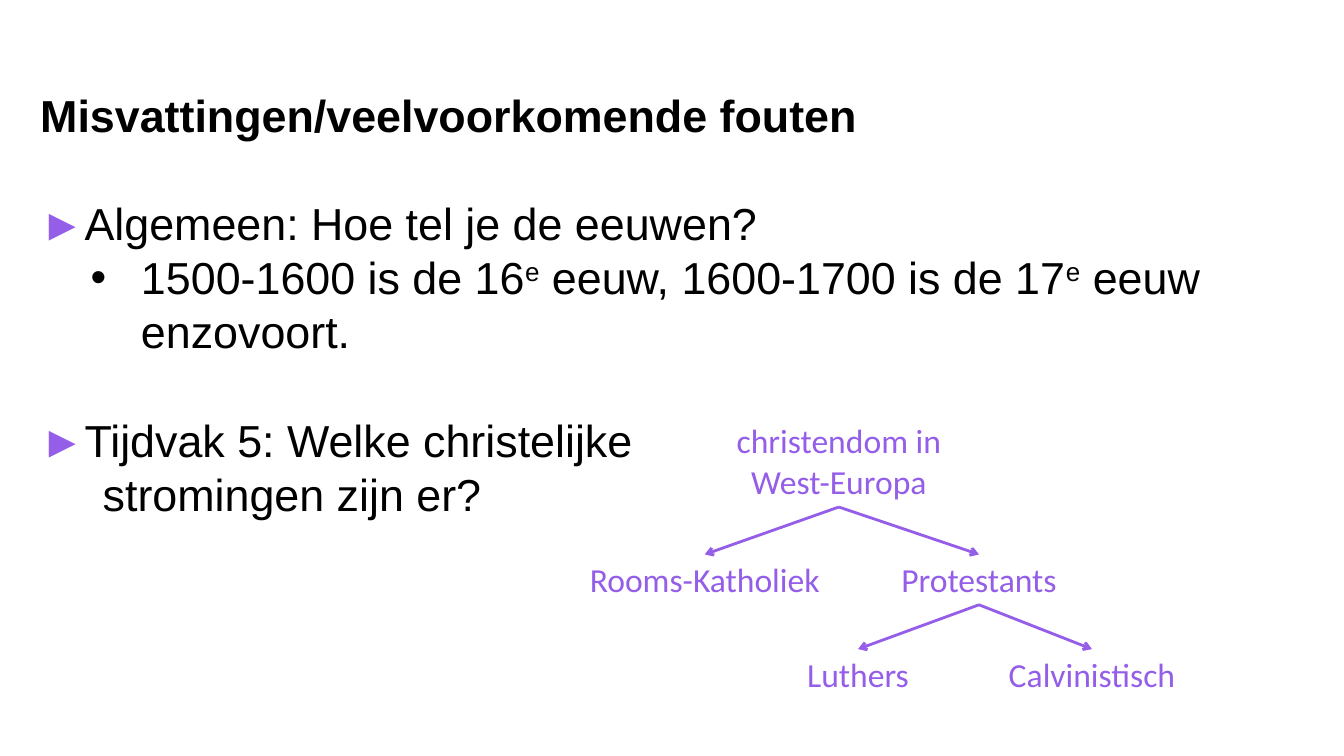
from lxml.etree import SubElement
from pptx import Presentation
from pptx.dml.color import RGBColor
from pptx.enum.shapes import MSO_CONNECTOR
from pptx.enum.text import MSO_AUTO_SIZE, PP_ALIGN
from pptx.oxml.ns import qn
from pptx.util import Inches, Pt

BLACK = RGBColor(0x00, 0x00, 0x00)
PURPLE = RGBColor(0x94, 0x5E, 0xE8)
BOTTOM, TOP = 2, 0


class SlideBuilder:
    body_font, body_size, line_height = "Arial", Pt(32), Pt(38.6)
    label_font, label_size, label_width = "Calibri", Pt(24), 2.98

    def __init__(self, slide):
        self.slide = slide

    def text_box(self, left, top, width, height):
        box = self.slide.shapes.add_textbox(
            Inches(left), Inches(top), Inches(width), Inches(height))
        box.text_frame.word_wrap = True
        box.text_frame.auto_size = MSO_AUTO_SIZE.SHAPE_TO_FIT_TEXT
        return box

    def body_line(self, para, pieces, gap=False, margin=0, indent=0, bullet=None):
        para.line_spacing = self.line_height
        para.space_before = self.line_height if gap else Pt(0)
        properties = para._p.get_or_add_pPr()
        properties.set("marL", str(Inches(margin)))
        properties.set("indent", str(Inches(indent)))
        if bullet:
            SubElement(properties, qn("a:buFont"), typeface=self.body_font)
            SubElement(properties, qn("a:buChar"), char=bullet)
        for text, style in pieces:
            if "\v" in text:
                first, second = text.split("\v")
                self.body_span(para, first, style)
                para.add_line_break()
                text = second
            self.body_span(para, text, style)

    def body_span(self, para, text, style):
        span = para.add_run()
        span.text = text
        span.font.name = self.body_font
        span.font.size = self.body_size
        span.font.bold = style == "bold"
        span.font.color.rgb = PURPLE if style == "marker" else BLACK
        if style == "raised":
            span.font._element.set("baseline", "30000")

    def label(self, text, left, top, height=0.5):
        box = self.text_box(left, top, self.label_width, height)
        para = box.text_frame.paragraphs[0]
        para.text = text
        para.alignment = PP_ALIGN.CENTER
        para.font.name = self.label_font
        para.font.size = self.label_size
        para.font.color.rgb = PURPLE
        return box

    def arrow(self, parent, child):
        line = self.slide.shapes.add_connector(MSO_CONNECTOR.STRAIGHT, 0, 0, 0, 0)
        line.begin_connect(parent, BOTTOM)
        line.end_connect(child, TOP)
        line.line.color.rgb = PURPLE
        line.line.width = Pt(2)
        SubElement(line.line._get_or_add_ln(), qn("a:tailEnd"), type="arrow")
        SubElement(line._element.spPr, qn("a:effectLst"))


def main():
    deck = Presentation()
    deck.slide_width, deck.slide_height = Inches(13.33), Inches(7.5)
    builder = SlideBuilder(deck.slides.add_slide(deck.slide_layouts[6]))

    frame = builder.text_box(0.3, 0.82, 12.42, 4.41).text_frame
    marker = ("►", "marker")
    builder.body_line(frame.paragraphs[0],
                      [("Misvattingen/veelvoorkomende fouten", "bold")])
    builder.body_line(frame.add_paragraph(),
                      [marker, ("Algemeen: Hoe tel je de eeuwen?", "plain")], gap=True)
    builder.body_line(frame.add_paragraph(), [
        ("1500-1600 is de 16", "plain"), ("e", "raised"),
        (" eeuw, 1600-1700 is de 17", "plain"), ("e", "raised"),
        (" eeuw enzovoort.", "plain"),
    ], margin=1, indent=-0.5, bullet="•")
    builder.body_line(
        frame.add_paragraph(),
        [marker, ("Tijdvak 5: Welke christelijke\vstromingen zijn er?", "plain")],
        gap=True, margin=0.62, indent=-0.62)

    christianity = builder.label("christendom in West-Europa", 6.83, 4.12, 0.91)
    catholics = builder.label("Rooms-Katholiek", 5.5, 5.5)
    protestants = builder.label("Protestants", 8.22, 5.5)
    lutherans = builder.label("Luthers", 7.02, 6.44)
    calvinists = builder.label("Calvinistisch", 9.34, 6.44)

    for parent, child in [(christianity, catholics), (christianity, protestants),
                          (protestants, lutherans), (protestants, calvinists)]:
        builder.arrow(parent, child)

    deck.save("out.pptx")


if __name__ == "__main__":
    main()
